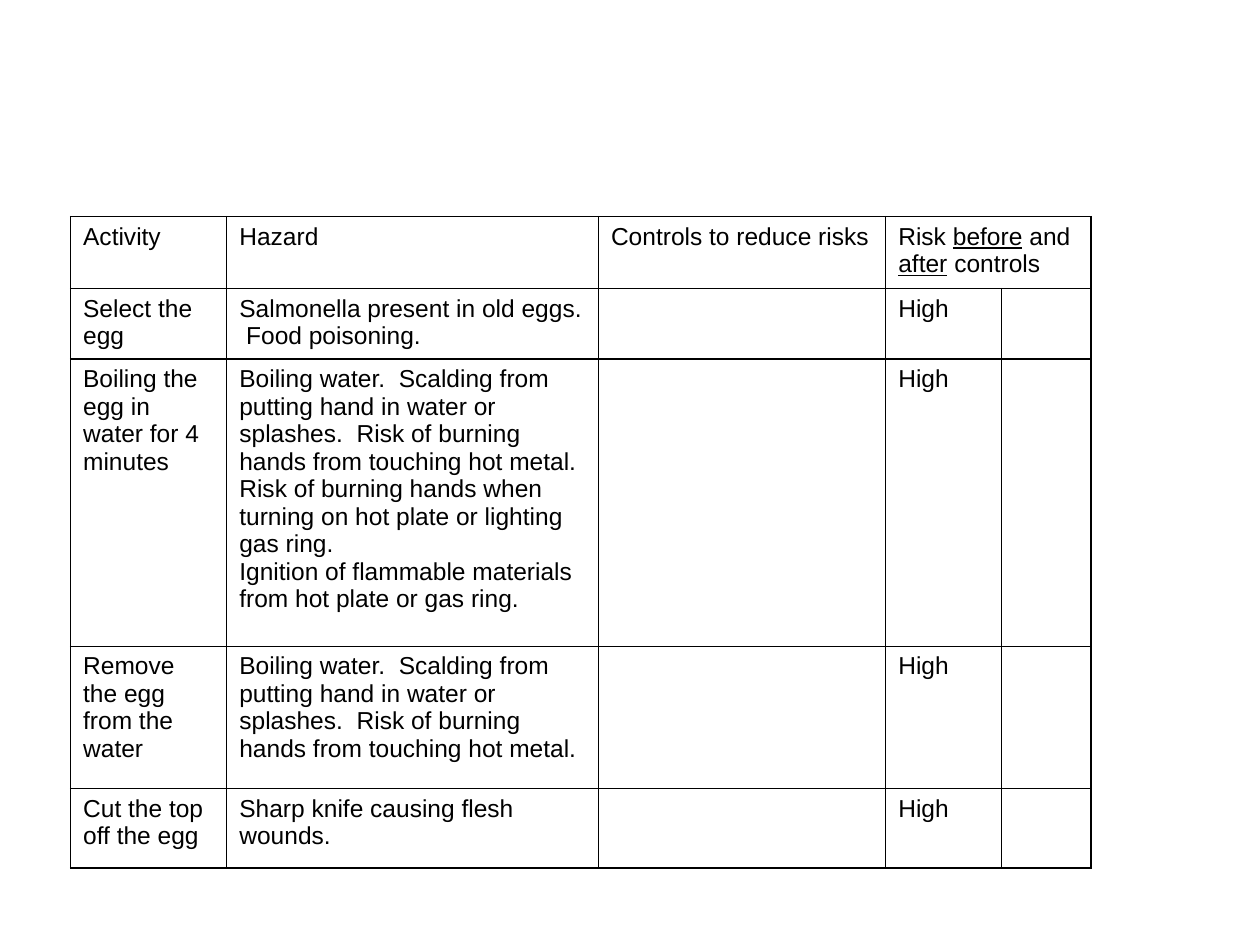
from dataclasses import dataclass

from lxml.etree import SubElement
from pptx import Presentation
from pptx.dml.color import RGBColor
from pptx.oxml.ns import qn
from pptx.util import Inches, Pt


@dataclass(frozen=True)
class Theme:
    font: str = "Arial"
    size: int = 14
    ink: str = "000000"
    border: float = 1


THEME = Theme()
SCALDING = ("Boiling water.  Scalding from putting hand in water or splashes.  "
            "Risk of burning hands from touching hot metal.")
HEADERS = ["Activity", "Hazard", "Controls to reduce risks"]
RISK_HEADER = [("Risk ", False), ("before", True), (" and ", False),
               ("after", True), (" controls", False)]
HAZARDS = [
    ("Select the egg", ["Salmonella present in old eggs.  Food poisoning."], "High"),
    ("Boiling the egg in water for 4 minutes",
     [SCALDING,
      "Risk of burning hands when turning on hot plate or lighting gas ring.",
      "Ignition of flammable materials from hot plate or gas ring."], "High"),
    ("Remove the egg from the water", [SCALDING], "High"),
    ("Cut the top off the egg", ["Sharp knife causing flesh wounds."], "High"),
]
COL_WIDTHS = [1.24, 2.95, 2.28, 0.92, 0.71]
ROW_HEIGHTS = [0.57, 0.56, 2.28, 1.13, 0.63]


def add_run(p, text, underline=False):
    r = p.add_run()
    r.text = text
    r.font.name = THEME.font
    r.font.size = Pt(THEME.size)
    r.font.color.rgb = RGBColor.from_string(THEME.ink)
    if underline:
        r.font.underline = True


def write_cell(cell, *paragraphs):
    tf = cell.text_frame
    for i, text in enumerate(paragraphs):
        p = tf.add_paragraph() if i else tf.paragraphs[0]
        add_run(p, text)


def style_cell(cell):
    cell.margin_left = cell.margin_right = Inches(0.1)
    cell.margin_top = cell.margin_bottom = Inches(0.05)
    tc_pr = cell._tc.get_or_add_tcPr()
    for side in ("a:lnL", "a:lnR", "a:lnT", "a:lnB"):
        ln = SubElement(tc_pr, qn(side), w=str(Pt(THEME.border)))
        fill = SubElement(ln, qn("a:solidFill"))
        SubElement(fill, qn("a:srgbClr"), val=THEME.ink)
    cell.fill.background()
    cell.text_frame.paragraphs[0].font.size = Pt(THEME.size)


def add_risk_table(slide, left, top, width, height):
    table = slide.shapes.add_table(len(ROW_HEIGHTS), len(COL_WIDTHS),
                                   left, top, width, height).table
    table.first_row = table.horz_banding = False
    for col, size in zip(table.columns, COL_WIDTHS):
        col.width = Inches(size)
    for row, size in zip(table.rows, ROW_HEIGHTS):
        row.height = Inches(size)
    for cell in table.iter_cells():
        style_cell(cell)

    for c, text in enumerate(HEADERS):
        write_cell(table.cell(0, c), text)
    risk = table.cell(0, 3)
    risk.merge(table.cell(0, 4))
    for text, underline in RISK_HEADER:
        add_run(risk.text_frame.paragraphs[0], text, underline=underline)

    for i, (activity, hazards, level) in enumerate(HAZARDS, start=1):
        write_cell(table.cell(i, 0), activity)
        write_cell(table.cell(i, 1), *hazards)
        write_cell(table.cell(i, 3), level)


def main():
    prs = Presentation()
    prs.slide_width, prs.slide_height = Inches(10), Inches(7.5)
    s = prs.slides.add_slide(prs.slide_layouts[6])
    add_risk_table(s, Inches(0.56), Inches(1.72),
                   Inches(sum(COL_WIDTHS)), Inches(sum(ROW_HEIGHTS)))
    prs.save("out.pptx")


if __name__ == "__main__":
    main()
